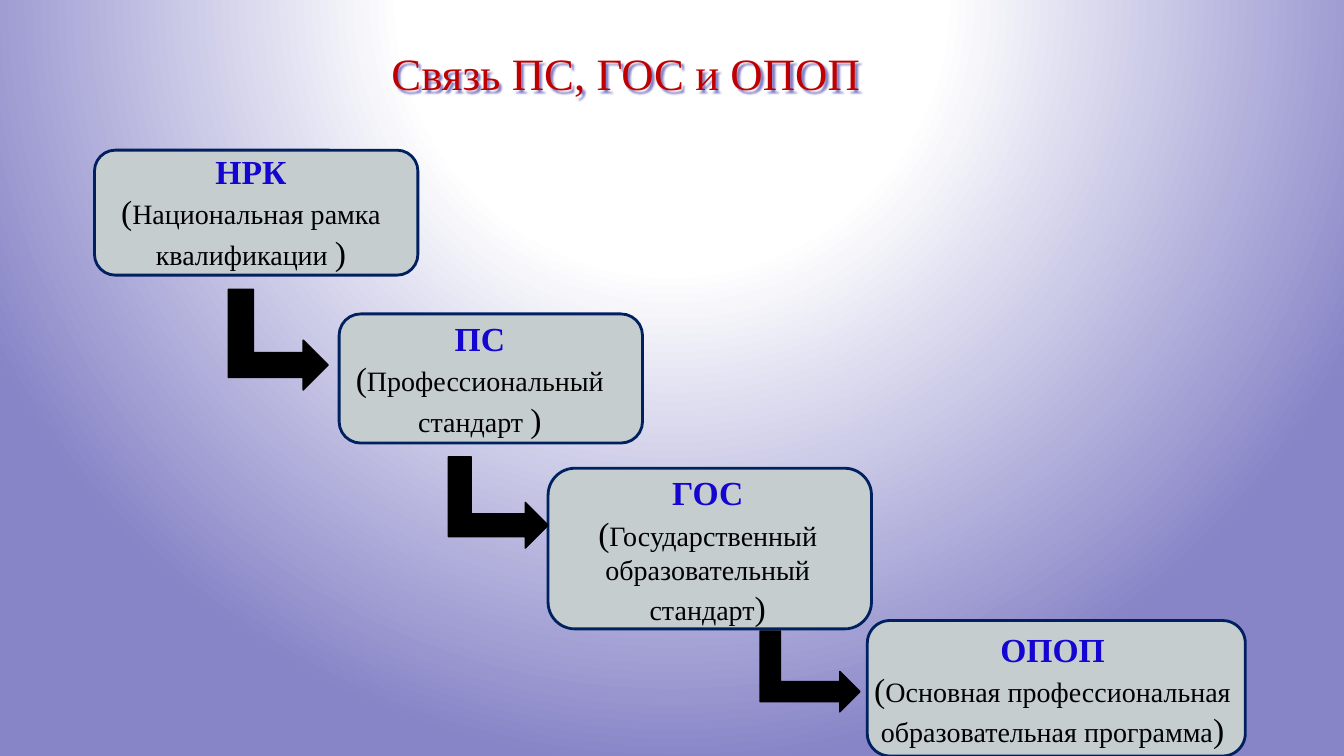
from dataclasses import dataclass

from pptx import Presentation
from pptx.dml.color import RGBColor
from pptx.enum.shapes import MSO_SHAPE
from pptx.enum.text import MSO_AUTO_SIZE, PP_ALIGN
from pptx.oxml import parse_xml
from pptx.oxml.ns import nsdecls
from pptx.util import Pt

ROUND_RECT = MSO_SHAPE.ROUNDED_RECTANGLE
BENT_ARROW = MSO_SHAPE.BENT_UP_ARROW
GROW = MSO_AUTO_SIZE.SHAPE_TO_FIT_TEXT
CENTER = PP_ALIGN.CENTER
PX = 9525  # EMU in one px


@dataclass(frozen=True)
class Theme:
    font: str = "Times New Roman"
    title: str = "C00000"
    heading: str = "1406D0"
    ink: str = "000000"
    card: str = "C5CDCE"
    border: str = "002060"
    glow: str = "FFFFFF"
    edge: str = "8784C7"
    shadow: str = "8784C7"
    title_size: int = 32
    heading_size: int = 24
    body_size: int = 20


THEME = Theme()

# Card box, text box relative to the card, abbreviation, full name
STEPS = [
    ((90, 143, 308, 119), (15, -4, 268, 156), "НРК",
     "Национальная рамка квалификации "),
    ((323, 299, 289, 123), (0, -1, 268, 156), "ПС",
     "Профессиональный стандарт "),
    ((522, 446, 308, 153), (18, -1, 268, 187), "ГОС",
     "Государственный образовательный стандарт"),
    ((826, 591, 360, 129), (-7, 3, 367, 126), "ОПОП",
     "Основная профессиональная образовательная программа"),
]
ARROWS = [(217, 276, 96, 95), (431, 431, 87, 95), (733, 592, 77, 95)]


def emu(box):
    return [v * PX for v in box]


def add_run(p, text, size, color, bold=False):
    r = p.add_run()
    r.text = text
    r.font.name = THEME.font
    r.font.size = Pt(size)
    r.font.bold = bold
    r.font.color.rgb = RGBColor.from_string(color)


def add_text_box(s, box, wrap):
    sp = s.shapes.add_textbox(*emu(box))
    sp.text_frame.word_wrap = wrap
    sp.text_frame.auto_size = GROW
    return sp


def add_solid(s, kind, box, fill, line, width):
    sp = s.shapes.add_shape(kind, *emu(box))
    sp.shadow.inherit = False
    sp.fill.solid()
    sp.fill.fore_color.rgb = RGBColor.from_string(fill)
    sp.line.color.rgb = RGBColor.from_string(line)
    sp.line.width = Pt(width)
    return sp


def add_background(s):
    stops = "".join(
        f'<a:gs pos="{pos * 1000}"><a:srgbClr val="{color}"/></a:gs>'
        for pos, color in [(0, THEME.glow), (35, THEME.glow), (100, THEME.edge)])
    bg = parse_xml(
        f'<p:bg {nsdecls("p", "a")}><p:bgPr><a:gradFill rotWithShape="1">'
        f'<a:gsLst>{stops}</a:gsLst><a:path path="circle">'
        '<a:fillToRect l="50000" t="-80000" r="50000" b="180000"/></a:path>'
        '</a:gradFill><a:effectLst/></p:bgPr></p:bg>')
    s.element.cSld.insert(0, bg)


def add_title(s, box, text):
    sp = add_text_box(s, box, False)
    p = sp.text_frame.paragraphs[0]
    p.alignment = CENTER
    add_run(p, text, THEME.title_size, THEME.title)
    # The box has no fill, so its shadow falls from the letters
    sp.element.spPr.append(parse_xml(
        f'<a:effectLst {nsdecls("a")}><a:outerShdw blurRad="12700" dist="28575" '
        f'dir="2700000" algn="tl"><a:srgbClr val="{THEME.shadow}"/>'
        '</a:outerShdw></a:effectLst>'))


def add_step(s, box, text_box, abbreviation, name):
    add_solid(s, ROUND_RECT, box, THEME.card, THEME.border, 2)
    x, y = box[:2]
    dx, dy, w, h = text_box
    tf = add_text_box(s, (x + dx, y + dy, w, h), True).text_frame
    heading, body = tf.paragraphs[0], tf.add_paragraph()
    for p in (heading, body):
        p.alignment = CENTER
    add_run(heading, abbreviation, THEME.heading_size, THEME.heading, True)
    add_run(body, "(", THEME.heading_size, THEME.ink)
    add_run(body, name, THEME.body_size, THEME.ink)
    add_run(body, ")", THEME.heading_size, THEME.ink)


def add_arrow(s, box):
    add_solid(s, BENT_ARROW, box, THEME.ink, THEME.ink, 1).rotation = 90


def main():
    prs = Presentation()
    prs.slide_width, prs.slide_height = 1280 * PX, 720 * PX
    s = prs.slides.add_slide(prs.slide_layouts[6])
    add_background(s)
    add_title(s, (354, 39, 495, 61), "Связь ПС, ГОС и ОПОП ")
    # Staircase of cards, then the arrows between them
    for step in STEPS:
        add_step(s, *step)
    for box in ARROWS:
        add_arrow(s, box)
    prs.save("out.pptx")


if __name__ == "__main__":
    main()
